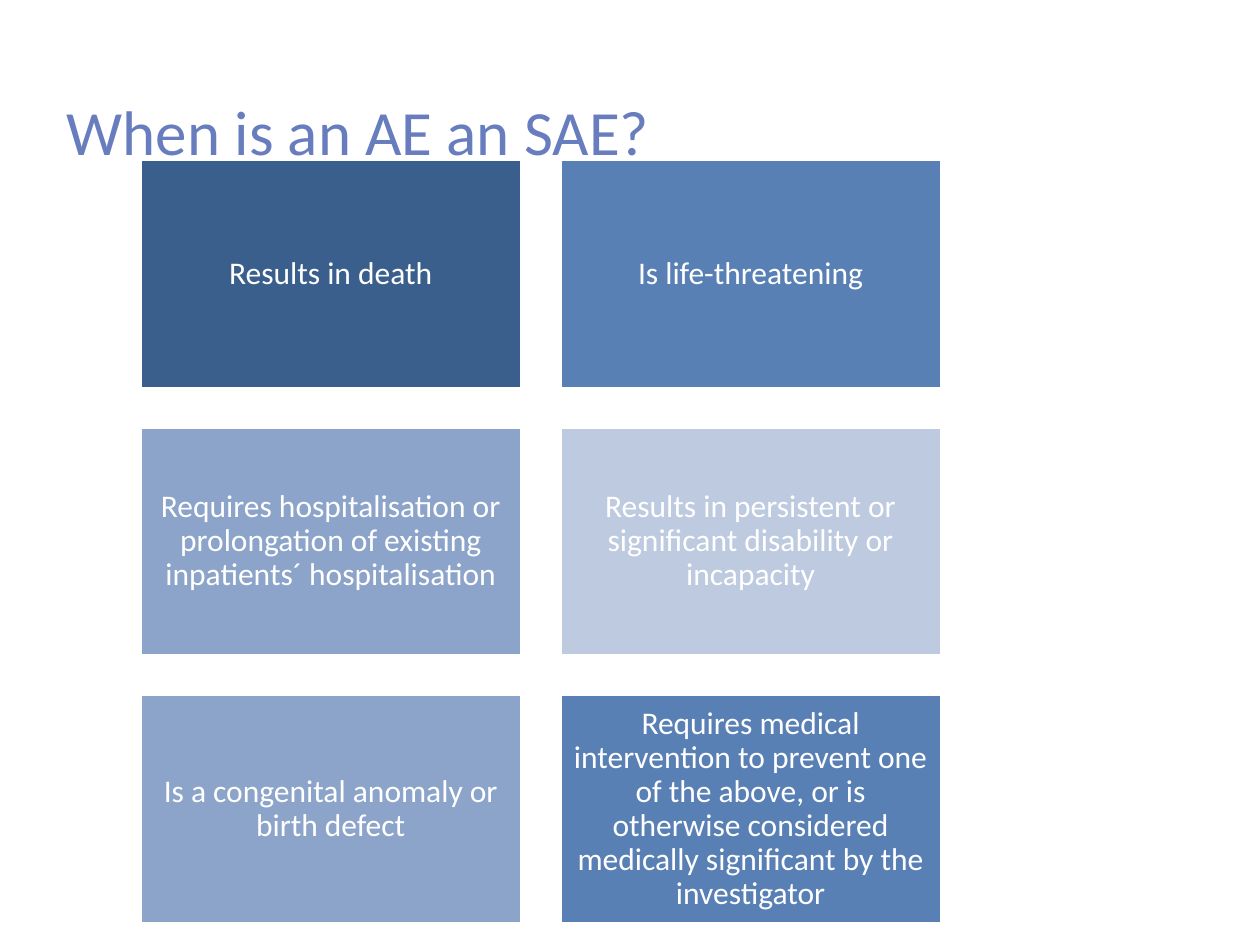
from dataclasses import dataclass

from pptx import Presentation
from pptx.dml.color import RGBColor
from pptx.enum.shapes import MSO_SHAPE
from pptx.enum.text import MSO_ANCHOR, MSO_AUTO_SIZE, PP_ALIGN
from pptx.util import Pt

RECTANGLE = MSO_SHAPE.RECTANGLE
TOP, MIDDLE = MSO_ANCHOR.TOP, MSO_ANCHOR.MIDDLE
LEFT, CENTER = PP_ALIGN.LEFT, PP_ALIGN.CENTER
NO_AUTOFIT = MSO_AUTO_SIZE.NONE
TITLE_ONLY = 5


@dataclass(frozen=True)
class Theme:
    font: str = "Calibri"
    title_size: float = 36
    card_size: float = 18
    title: str = "687DBE"
    white: str = "FFFFFF"
    navy: str = "3A5F8C"
    blue: str = "5980B5"
    mist: str = "8CA4C9"
    pale: str = "BECADF"


THEME = Theme()

CRITERIA = [
    ("Results in death", THEME.navy),
    ("Is life-threatening", THEME.blue),
    ("Requires hospitalisation or prolongation of existing "
     "inpatients´ hospitalisation", THEME.mist),
    ("Results in persistent or significant disability or incapacity", THEME.pale),
    ("Is a congenital anomaly or birth defect", THEME.mist),
    ("Requires medical intervention to prevent one of the above, or is "
     "otherwise considered medically significant by the investigator", THEME.blue),
]


def rgb(color):
    return RGBColor.from_string(color)


def set_text(tf, text, size, color, align, anchor):
    """Put one formatted paragraph into a text frame."""
    tf.text = text
    tf.word_wrap = True
    tf.auto_size = NO_AUTOFIT
    tf.vertical_anchor = anchor
    p = tf.paragraphs[0]
    p.alignment = align
    font = p.runs[0].font
    font.name, font.size = THEME.font, Pt(size)
    font.color.rgb = rgb(color)
    return p


def add_title(s, text, left, top, width, height):
    sp = s.shapes.title
    sp.left, sp.top, sp.width, sp.height = map(Pt, (left, top, width, height))
    set_text(sp.text_frame, text, THEME.title_size, THEME.title, LEFT, TOP)


def add_card(s, text, fill, left, top, width, height):
    sp = s.shapes.add_shape(RECTANGLE, *map(Pt, (left, top, width, height)))
    sp.shadow.inherit = False
    sp.fill.solid()
    sp.fill.fore_color.rgb = rgb(fill)
    sp.line.color.rgb = rgb(THEME.white)
    sp.line.width = Pt(2)
    tf = sp.text_frame
    tf.margin_left = tf.margin_right = tf.margin_top = tf.margin_bottom = Pt(5)
    p = set_text(tf, text, THEME.card_size, THEME.white, CENTER, MIDDLE)
    p.line_spacing = 0.9


def add_card_grid(s, cards, left, top, width, height, columns=2, gap=21.8):
    """Fill the box with equal cards, row by row."""
    rows = -(-len(cards) // columns)
    w = (width - gap * (columns - 1)) / columns
    h = (height - gap * (rows - 1)) / rows
    for i, (text, fill) in enumerate(cards):
        row, col = divmod(i, columns)
        add_card(s, text, fill, left + col * (w + gap), top + row * (h + gap), w, h)


def main():
    prs = Presentation()
    prs.slide_width, prs.slide_height = Pt(720), Pt(540)
    s = prs.slides.add_slide(prs.slide_layouts[TITLE_ONLY])

    # Heading
    add_title(s, "When is an AE an SAE?", 31, 49, 663, 51)
    # Seriousness criteria
    add_card_grid(s, CRITERIA, 80, 91, 458, 437)

    prs.save("out.pptx")


if __name__ == "__main__":
    main()
